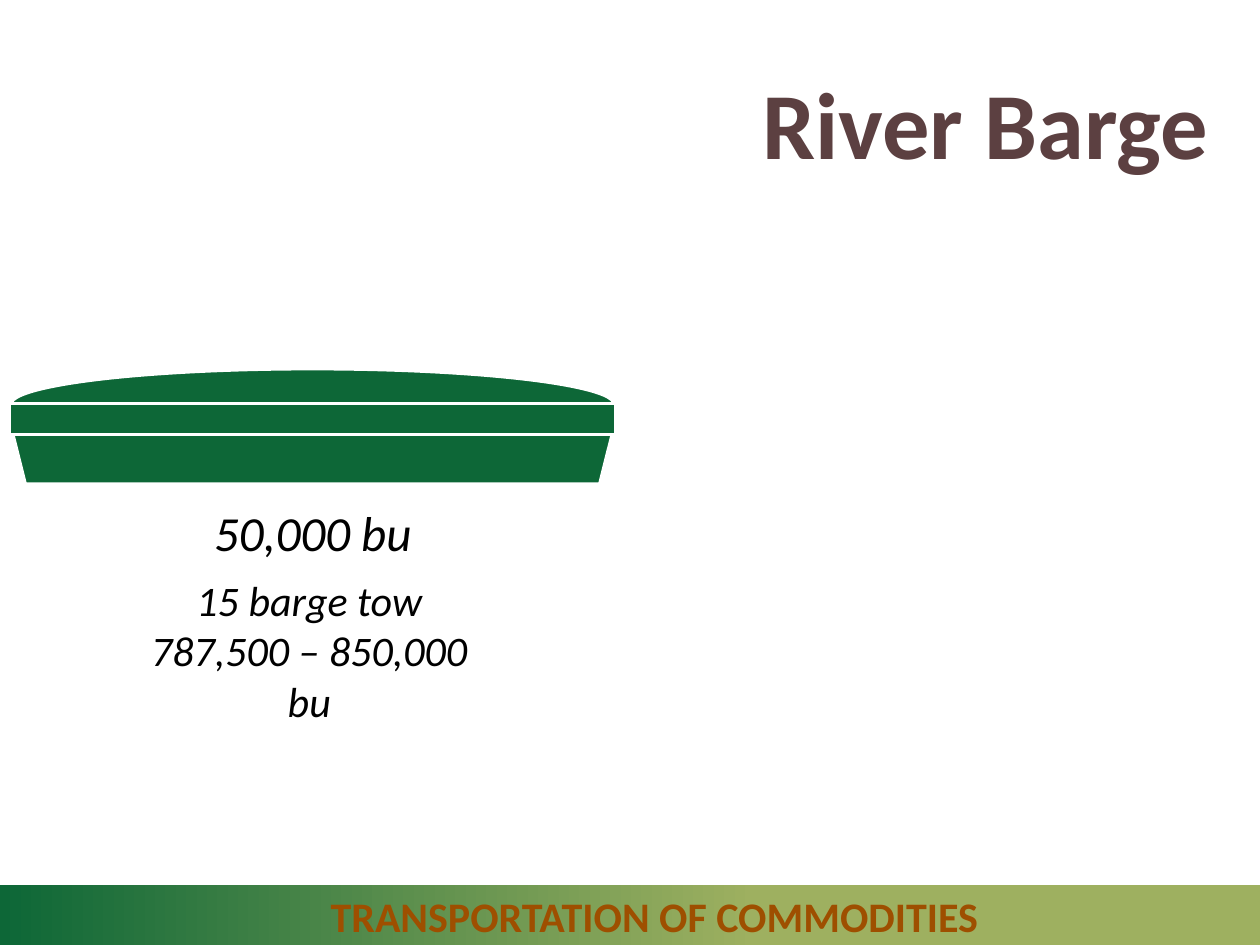
from pptx import Presentation
from pptx.dml.color import RGBColor
from pptx.enum.shapes import MSO_SHAPE
from pptx.enum.text import MSO_ANCHOR, PP_ALIGN
from pptx.util import Pt

GREEN = RGBColor(0x0D, 0x67, 0x37)
OLIVE = RGBColor(0x9E, 0xB0, 0x60)
BROWN = RGBColor(0x5C, 0x40, 0x41)
ORANGE = RGBColor(0x9E, 0x4F, 0x00)
BLACK = RGBColor(0, 0, 0)
WHITE = RGBColor(0xFF, 0xFF, 0xFF)
FONT = "Calibri"


def place(shape, left, top, width, height):
    shape.left, shape.top = Pt(left), Pt(top)
    shape.width, shape.height = Pt(width), Pt(height)


def write_lines(frame, lines, size, color, align, bold=False, italic=False):
    frame.word_wrap = True
    for index, line in enumerate(lines):
        para = frame.paragraphs[0] if index == 0 else frame.add_paragraph()
        para.alignment = align
        span = para.add_run()
        span.text = line
        span.font.name = FONT
        span.font.size = Pt(size)
        span.font.bold = bold
        span.font.italic = italic
        span.font.color.rgb = color


def add_title(page, text):
    title = page.shapes.title
    place(title, 92.2, 24.5, 605.5, 90)
    title.text_frame.vertical_anchor = MSO_ANCHOR.MIDDLE
    write_lines(title.text_frame, [text], 54, BROWN, PP_ALIGN.RIGHT, bold=True)


def add_caption(page, lines, left, top, width, height, size, align):
    box = page.shapes.add_textbox(Pt(left), Pt(top), Pt(width), Pt(height))
    write_lines(box.text_frame, lines, size, BLACK, align, italic=True)


def add_barge(page, left, width):
    barge = page.shapes.add_group_shape()
    parts = [  # kind, top, height, outline
        (MSO_SHAPE.OVAL, 210.2, 41, 3),
        (MSO_SHAPE.TRAPEZOID, 241.2, 35.3, 1.5),
        (MSO_SHAPE.RECTANGLE, 230.4, 18, 1.5),
    ]
    for kind, top, height, outline in parts:
        part = barge.shapes.add_shape(kind, Pt(left), Pt(top), Pt(width), Pt(height))
        part.shadow.inherit = False
        part.fill.solid()
        part.fill.fore_color.rgb = GREEN
        part.line.color.rgb = WHITE
        part.line.width = Pt(outline)
        if kind == MSO_SHAPE.TRAPEZOID:  # hull is narrow at the bottom
            part._element.spPr.xfrm.set("flipV", "1")


def add_footer_bar(page, text):
    bar = page.shapes.add_shape(MSO_SHAPE.RECTANGLE, 0, Pt(505.5), Pt(731.5), Pt(36))
    bar.shadow.inherit = False
    bar.line.fill.background()
    bar.fill.gradient()
    bar.fill.gradient_angle = 0
    for stop, position, color in zip(bar.fill.gradient_stops, (0, 0.59), (GREEN, OLIVE)):
        stop.position = position
        stop.color.rgb = color
    bar.text_frame.margin_left = Pt(23.5)
    write_lines(bar.text_frame, [text], 24, ORANGE, PP_ALIGN.CENTER, bold=True)


def main():
    deck = Presentation()
    deck.slide_width, deck.slide_height = Pt(720), Pt(540)
    page = deck.slides.add_slide(deck.slide_layouts[5])

    # Barge drawing with its capacities
    add_barge(page, 5.8, 345.6)
    add_caption(page, ["50,000 bu"], 115.2, 283.7, 131, 41, 28, PP_ALIGN.LEFT)
    add_caption(page, ["15 barge tow", "787,500 – 850,000 bu"],
                64.8, 324.7, 223.9, 65.5, 24, PP_ALIGN.CENTER)

    # Title and footer
    add_title(page, "River Barge")
    add_footer_bar(page, "TRANSPORTATION OF COMMODITIES")
    deck.save("out.pptx")


if __name__ == "__main__":
    main()
